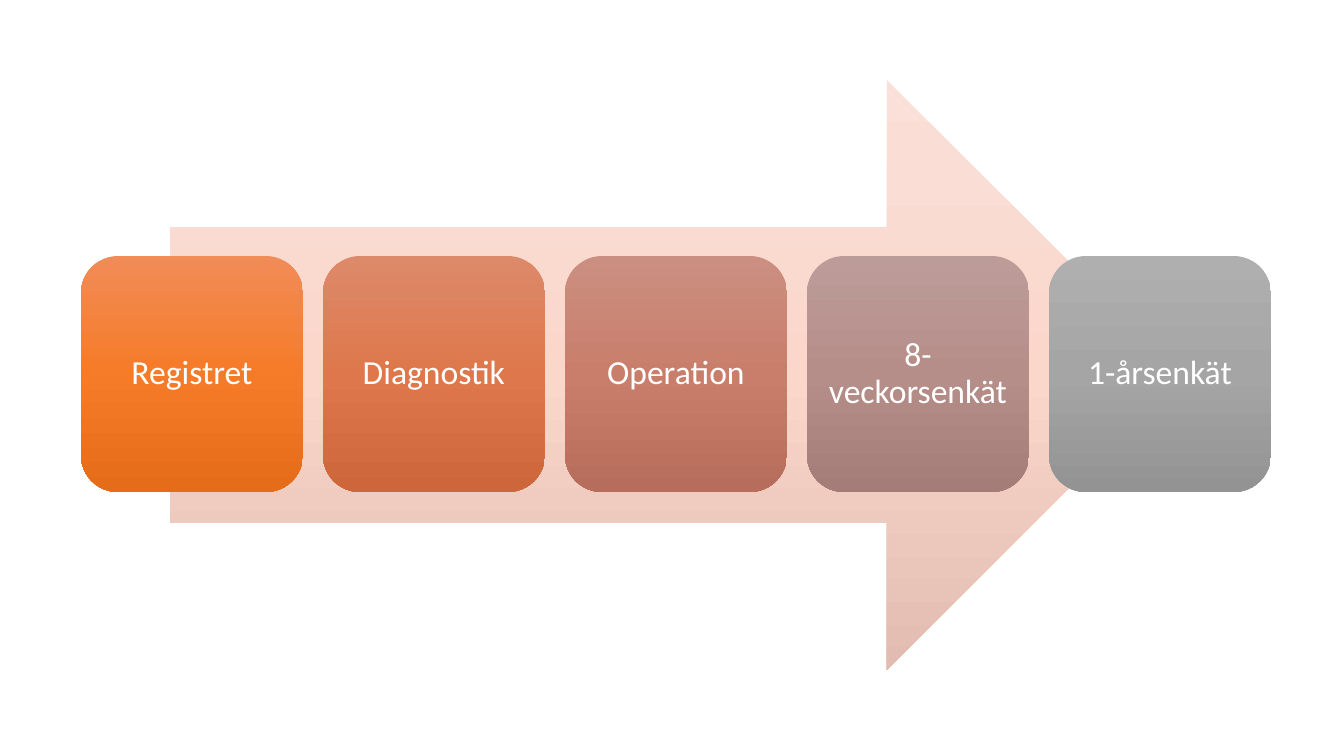
import copy
import pptx
import pptx.dml.color
import pptx.enum.shapes
import pptx.enum.text
import pptx.oxml.ns
import pptx.util

THEME = {
    "font": "Calibri",
    "size": pptx.util.Pt(24),
    "text": "FFFFFF",
    "arrow": ("FAE0D8", "FAD6CB", "E2BCB1"),
    "steps": (
        ("F18C57", "F67B28", "E56C19"),
        ("DD8A6A", "DE774B", "CD673B"),
        ("CB8F81", "C97E6B", "B76D5B"),
        ("BC9C99", "B68E89", "A47C78"),
        ("AFAFAF", "A5A5A5", "939393"),
    ),
}
STEPS = ("Registret", "Diagnostik", "Operation", "8-veckorsenkät", "1-årsenkät")
SHAPE = pptx.enum.shapes.MSO_SHAPE


def px(n):
    return pptx.util.Emu(round(n * 914400 / 100.8))


def add_gradient_shape(slide, kind, box, colours):
    s = slide.shapes.add_shape(kind, *map(px, box))
    s.shadow.inherit = False
    s.line.fill.background()
    s.fill.gradient()
    s.fill.gradient_angle = 270
    stop_list = s.element.spPr.find(".//" + pptx.oxml.ns.qn("a:gsLst"))
    stop_list.append(copy.deepcopy(stop_list[-1]))
    for stop, position, colour in zip(s.fill.gradient_stops, (0, 0.5, 1), colours):
        stop.position = position
        stop.color.rgb = pptx.dml.color.RGBColor.from_string(colour)
    return s


prs = pptx.Presentation()
prs.slide_width, prs.slide_height = px(1344), px(756)
slide = prs.slides.add_slide(prs.slide_layouts[6])

add_gradient_shape(slide, SHAPE.RIGHT_ARROW, (170, 80, 1012, 590), THEME["arrow"])

left, top, width, height, gap = 81, 256, 222, 236, 20
frame_format = {
    "word_wrap": True,
    "vertical_anchor": pptx.enum.text.MSO_ANCHOR.MIDDLE,
    "margin_left": px(10),
    "margin_right": px(10),
    "margin_top": px(10),
    "margin_bottom": px(10),
}
for i, (label, colours) in enumerate(zip(STEPS, THEME["steps"])):
    box = (left + i * (width + gap), top, width, height)
    s = add_gradient_shape(slide, SHAPE.ROUNDED_RECTANGLE, box, colours)
    tf = s.text_frame
    for name, value in frame_format.items():
        setattr(tf, name, value)
    p = tf.paragraphs[0]
    p.alignment = pptx.enum.text.PP_ALIGN.CENTER
    p.line_spacing = 0.9
    r = p.add_run()
    r.text = label
    r.font.name = THEME["font"]
    r.font.size = THEME["size"]
    r.font.color.rgb = pptx.dml.color.RGBColor.from_string(THEME["text"])

prs.save("out.pptx")
